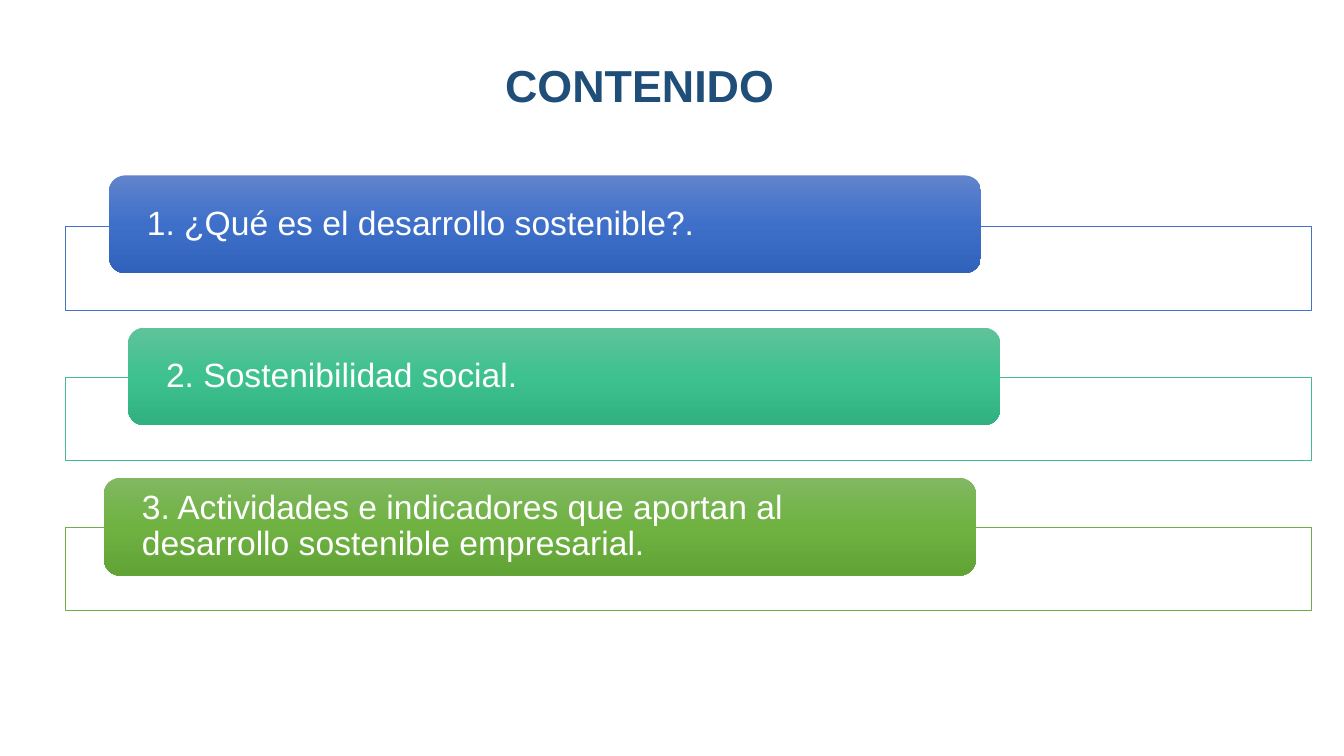
from copy import deepcopy

from pptx import Presentation
from pptx.dml.color import RGBColor
from pptx.enum.shapes import MSO_SHAPE
from pptx.enum.text import MSO_ANCHOR, MSO_AUTO_SIZE, PP_ALIGN
from pptx.oxml.ns import qn
from pptx.util import Pt

PX = 9144  # 100 px to the inch
RECT, ROUND = MSO_SHAPE.RECTANGLE, MSO_SHAPE.ROUNDED_RECTANGLE
TOP, MIDDLE = MSO_ANCHOR.TOP, MSO_ANCHOR.MIDDLE
LEFT, CENTER = PP_ALIGN.LEFT, PP_ALIGN.CENTER
FIXED = MSO_AUTO_SIZE.NONE

WHITE = RGBColor(0xFF, 0xFF, 0xFF)
NAVY = RGBColor(0x1F, 0x4E, 0x79)
BLUE = RGBColor(0x44, 0x72, 0xC4)
TEAL = RGBColor(0x43, 0xBB, 0x8D)
GREEN = RGBColor(0x70, 0xAD, 0x47)
BLUES = [RGBColor(0x61, 0x83, 0xCB), RGBColor(0x3E, 0x70, 0xCA), RGBColor(0x30, 0x62, 0xBB)]
TEALS = [RGBColor(0x60, 0xC3, 0x9A), RGBColor(0x3D, 0xC1, 0x8F), RGBColor(0x31, 0xB0, 0x80)]
GREENS = [RGBColor(0x81, 0xB8, 0x61), RGBColor(0x6F, 0xB2, 0x42), RGBColor(0x62, 0xA3, 0x36)]

TOPICS = [
    ("1. ¿Qué es el desarrollo sostenible?.", 108, 174, BLUE, BLUES),
    ("2. Sostenibilidad social.", 127, 325, TEAL, TEALS),
    ("3. Actividades e indicadores que aportan al desarrollo sostenible empresarial.",
     103, 474, GREEN, GREENS),
]


def put(kind, x, y, w, h):
    shape = slide.shapes.add_shape(kind, x * PX, y * PX, w * PX, h * PX)
    shape.shadow.inherit = False
    return shape


def write(frame, text, size, color, align, anchor):
    frame.word_wrap = True
    frame.auto_size = FIXED
    frame.vertical_anchor = anchor
    para = frame.paragraphs[0]
    para.text = text
    para.alignment = align
    para.line_spacing = 0.9
    font = para.font
    font.name, font.size = "Arial", Pt(size)
    font.color.rgb = color
    return font


prs = Presentation()
prs.slide_width, prs.slide_height = 1333 * PX, 750 * PX
slide = prs.slides.add_slide(prs.slide_layouts[5])

title = slide.shapes.title
title.left, title.top = -32 * PX, 58 * PX
title.width, title.height = 1333 * PX, 72 * PX
write(title.text_frame, "CONTENIDO", 32, NAVY, CENTER, TOP).bold = True

for row, (text, x, y, edge, shades) in enumerate(TOPICS):
    box = put(RECT, 65, 225 + row * 149, 1236, 83)
    box.fill.solid()
    box.fill.fore_color.rgb = WHITE
    box.line.color.rgb = edge
    box.line.width = Pt(0.5)

    bar = put(ROUND, x, y, 865, 97)
    bar.line.fill.background()
    bar.fill.gradient()
    bar.fill.gradient_angle = 270
    # A new gradient has two stops; a third goes between them
    stops = bar._element.spPr.find(qn("a:gradFill")).find(qn("a:gsLst"))
    stops.insert(1, deepcopy(stops[0]))
    for num, (stop, shade) in enumerate(zip(bar.fill.gradient_stops, shades)):
        stop.position = num / 2
        stop.color.rgb = shade

    frame = bar.text_frame
    frame.margin_left = frame.margin_right = 33 * PX
    frame.margin_top = frame.margin_bottom = 0
    write(frame, text, 24, WHITE, LEFT, MIDDLE)

prs.save("out.pptx")
